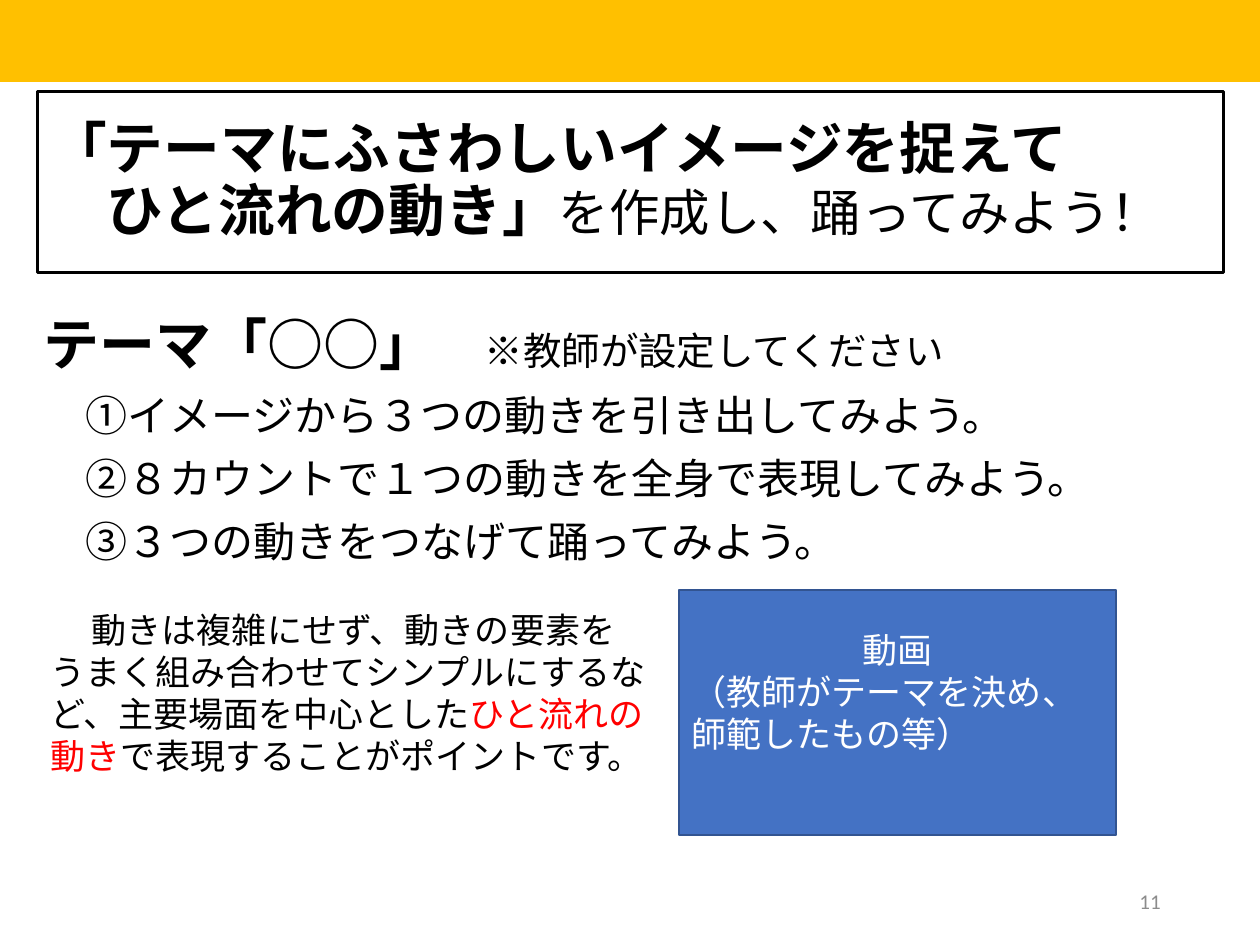
from pptx import Presentation
from pptx.dml.color import RGBColor
from pptx.enum.shapes import MSO_SHAPE
from pptx.enum.text import MSO_ANCHOR, PP_ALIGN
from pptx.oxml.ns import qn
from pptx.util import Inches, Pt
from lxml import etree

RECTANGLE = MSO_SHAPE.RECTANGLE
TOP, MIDDLE = MSO_ANCHOR.TOP, MSO_ANCHOR.MIDDLE
LEFT, CENTER, RIGHT = PP_ALIGN.LEFT, PP_ALIGN.CENTER, PP_ALIGN.RIGHT

COLORS = {
    "text": "000000",
    "band": "FFC000",
    "accent": "FF0000",
    "video": "4472C4",
    "video_line": "325491",
    "light": "FFFFFF",
    "number": "8C8C8C",
}


class LessonSlide:
    font = "Calibri"

    def __init__(self, deck):
        self.page = deck.slides.add_slide(deck.slide_layouts[6])

    def color(self, name):
        return RGBColor.from_string(COLORS[name])

    def rectangle(self, left, top, width, height, fill=None, line=None, weight=1):
        box = self.page.shapes.add_shape(
            RECTANGLE, Inches(left), Inches(top), Inches(width), Inches(height))
        box.shadow.inherit = False
        if fill:
            box.fill.solid()
            box.fill.fore_color.rgb = self.color(fill)
        else:
            box.fill.background()
        if line:
            box.line.color.rgb = self.color(line)
            box.line.width = Pt(weight)
        else:
            box.line.fill.background()
        return self.frame(box, MIDDLE)

    def text_box(self, left, top, width, height, anchor=TOP):
        box = self.page.shapes.add_textbox(
            Inches(left), Inches(top), Inches(width), Inches(height))
        return self.frame(box, anchor)

    def frame(self, box, anchor):
        frame = box.text_frame
        frame.word_wrap = True
        frame.vertical_anchor = anchor
        return frame

    def paragraph(self, frame, align=LEFT, spacing=None, before=0, margin=0, indent=0, tab=None):
        first = not frame.paragraphs[0].runs
        para = frame.paragraphs[0] if first else frame.add_paragraph()
        para.alignment = align
        if spacing:
            para.line_spacing = spacing
        if before and not first:
            para.space_before = Pt(before)
        properties = para._p.get_or_add_pPr()
        properties.set("marL", str(Inches(margin)))
        properties.set("indent", str(Inches(indent)))
        if tab:
            tabs = etree.SubElement(properties, qn("a:tabLst"))
            etree.SubElement(tabs, qn("a:tab"), pos=str(Inches(tab)), algn="l")
        return para

    def span(self, para, text, size, color="text", bold=False):
        span = para.add_run()
        span.text = text
        span.font.name = self.font
        span.font.size = Pt(size)
        span.font.bold = bold
        span.font.color.rgb = self.color(color)


def main():
    deck = Presentation()
    deck.slide_width, deck.slide_height = Inches(10), Inches(7.5)
    slide = LessonSlide(deck)

    slide.rectangle(-0.02, 0, 10.02, 0.65, fill="band")

    title = slide.rectangle(0.3, 0.73, 9.41, 1.43, line="text", weight=1.75)
    para = slide.paragraph(title, spacing=0.9, margin=0.45, indent=-0.45)
    slide.span(para, "「テーマにふさわしいイメージを捉えて", 32.4, bold=True)
    para.add_line_break()
    slide.span(para, "ひと流れの動き」", 32.4, bold=True)
    slide.span(para, "を作成し、踊ってみよう！", 28.8)

    body = slide.text_box(0.25, 2.47, 9.66, 3.45)
    para = slide.paragraph(body, spacing=0.9, tab=3.56)
    slide.span(para, "テーマ「○○」\t", 32, bold=True)
    slide.span(para, "※教師が設定してください", 22)
    for step in (
        "①イメージから３つの動きを引き出してみよう。",
        "②８カウントで１つの動きを全身で表現してみよう。",
        "③３つの動きをつなげて踊ってみよう。",
    ):
        para = slide.paragraph(body, spacing=0.9, before=10, margin=0.33)
        slide.span(para, step, 24)

    advice = slide.text_box(0.3, 4.78, 4.95, 1.46)
    para = slide.paragraph(advice, indent=0.33)
    slide.span(para, "動きは複雑にせず、動きの要素をうまく組み合わせてシンプルにするなど、主要場面を中心とした", 20)
    slide.span(para, "ひと流れの動き", 20, "accent")
    slide.span(para, "で表現することがポイントです。", 20)

    video = slide.rectangle(5.39, 4.68, 3.47, 1.95, fill="video", line="video_line")
    video.margin_bottom = Inches(0.38)
    for text, align in (
        ("動画", CENTER),
        ("（教師がテーマを決め、師範したもの等）", LEFT),
    ):
        slide.span(slide.paragraph(video, align), text, 20, "light")

    number = slide.text_box(7.06, 6.95, 2.25, 0.4, MIDDLE)
    slide.span(slide.paragraph(number, RIGHT), "11", 12, "number")

    deck.save("out.pptx")


if __name__ == "__main__":
    main()
